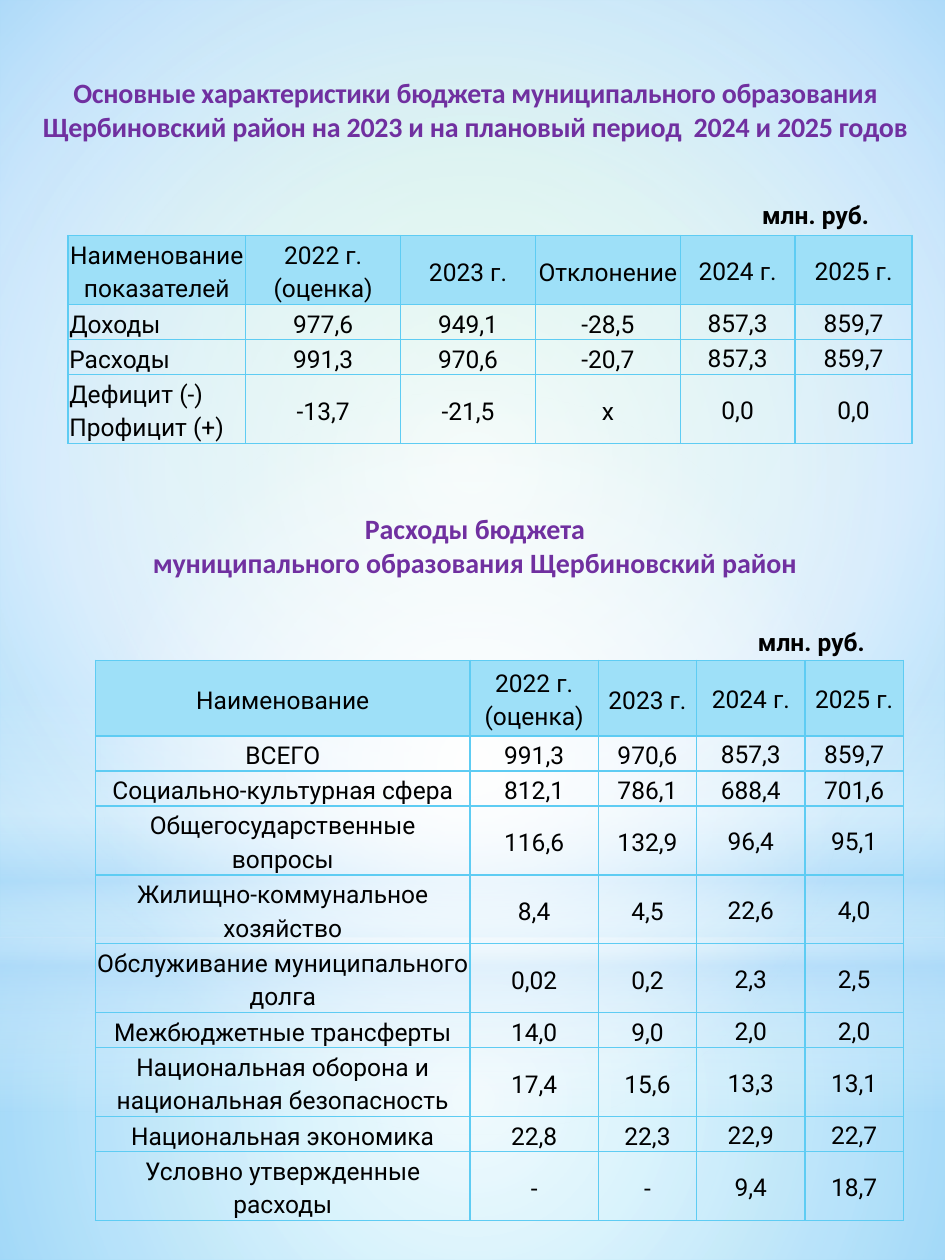
from dataclasses import dataclass

from pptx import Presentation
from pptx.dml.color import RGBColor
from pptx.enum.shapes import MSO_SHAPE
from pptx.enum.text import MSO_ANCHOR, MSO_AUTO_SIZE, PP_ALIGN
from pptx.oxml import parse_xml
from pptx.oxml.ns import nsdecls, qn
from pptx.util import Inches, Pt


@dataclass(frozen=True)
class Theme:
    """Colours, fonts and type sizes of the slide."""

    heading: str = "7030A0"
    text: str = "000000"
    border: str = "5ECCF3"
    header: str = "9EE0F8"
    white: str = "FFFFFF"
    sky: str = "B4DCFA"
    mint: str = "9EE2CF"
    heading_font: str = "Calibri"
    body_font: str = "Roboto"
    heading_size: int = 16
    body_size: int = 14


def write_text(frame, text, *, font, size, color, bold=False,
               align=PP_ALIGN.CENTER, line_spacing=1.0, tracking=0):
    """Write one formatted paragraph for each line of the text."""
    for index, line in enumerate(text.split("\n")):
        para = frame.paragraphs[0] if index == 0 else frame.add_paragraph()
        para.alignment = align
        para.line_spacing = line_spacing
        span = para.add_run()
        span.text = line
        span.font.name = font
        span.font.size = Pt(size)
        span.font.bold = bold
        span.font.color.rgb = RGBColor.from_string(color)
        if tracking:
            span.font._element.set("spc", str(round(tracking * 100)))


def make_gradient(stops, focus=None, angle=0):
    """Return a circular gradient around the focus, or a linear one at the angle."""
    marks = "".join(
        f'<a:gs pos="{place * 1000}"><a:srgbClr val="{color}">'
        f'<a:alpha val="{opacity * 1000}"/></a:srgbClr></a:gs>'
        for place, color, opacity in stops)
    shade = f'<a:lin ang="{angle * 60000}" scaled="0"/>'
    if focus:
        sides = " ".join(f'{side}="{value * 1000}"' for side, value in zip("ltrb", focus))
        shade = f'<a:path path="circle"><a:fillToRect {sides}/></a:path>'
    return parse_xml(f'<a:gradFill {nsdecls("a")} rotWithShape="1">'
                     f'<a:gsLst>{marks}</a:gsLst>{shade}</a:gradFill>')


class BudgetSlide:
    """Holds the theme and the slide, and draws each kind of element."""

    def __init__(self, deck, theme):
        """Add a slide with a title placeholder."""
        self.theme = theme
        self.page = deck.slides.add_slide(deck.slide_layouts[5])

    def background(self, stops, focus):
        """Fill the page background with a circular gradient."""
        self.page.background.fill.solid()
        solid = next(self.page.element.iter(qn("a:solidFill")))
        solid.getparent().replace(solid, make_gradient(stops, focus))

    def glow(self, kind, top, height, stops, focus=None, angle=0):
        """Draw a translucent gradient across the page width."""
        shape = self.page.shapes.add_shape(
            kind, 0, Inches(top), Inches(7.5), Inches(height))
        shape.shadow.inherit = False
        shape.line.fill.background()
        shape.fill.solid()
        solid = shape.element.spPr.find(qn("a:solidFill"))
        shape.element.spPr.replace(solid, make_gradient(stops, focus, angle))

    def heading(self, box, text, tracking=0):
        """Format a box as a purple heading without insets."""
        frame = box.text_frame
        frame.word_wrap = True
        frame.auto_size = MSO_AUTO_SIZE.NONE
        frame.vertical_anchor = MSO_ANCHOR.TOP
        frame.margin_left = frame.margin_right = 0
        frame.margin_top = frame.margin_bottom = 0
        write_text(frame, text, font=self.theme.heading_font,
                   size=self.theme.heading_size, color=self.theme.heading,
                   bold=True, tracking=tracking)

    def title(self, text, left, top, width, height):
        """Place the title placeholder above the glows."""
        box = self.page.shapes.title
        box.left, box.top = Inches(left), Inches(top)
        box.width, box.height = Inches(width), Inches(height)
        self.page.shapes._spTree.append(box.element)
        self.heading(box, text, tracking=-0.1)

    def text_box(self, left, top, width, height):
        """Add an empty wrapping text box."""
        box = self.page.shapes.add_textbox(
            Inches(left), Inches(top), Inches(width), Inches(height))
        box.text_frame.word_wrap = True
        return box

    def unit(self, left, top, width, align):
        """Label a table with its unit."""
        box = self.text_box(left, top, width, 0.34)
        write_text(box.text_frame, "млн. руб.", font=self.theme.body_font,
                   size=self.theme.body_size, color=self.theme.text,
                   bold=True, align=align)

    def border(self, cell):
        """Draw a thin line on all sides of a cell."""
        properties = cell._tc.get_or_add_tcPr()
        for index, side in enumerate("LRTB"):
            properties.insert(index, parse_xml(
                f'<a:ln{side} {nsdecls("a")} w="12700"><a:solidFill>'
                f'<a:srgbClr val="{self.theme.border}"/></a:solidFill></a:ln{side}>'))

    def table(self, left, top, height, widths, heights, rows, label_align):
        """Draw a bordered table with a tinted header row."""
        holder = self.page.shapes.add_table(
            len(rows), len(widths), Inches(left), Inches(top),
            Inches(sum(widths)), Inches(height))
        table = holder.table
        table.first_row = table.horz_banding = False
        for column, width in zip(table.columns, widths):
            column.width = Inches(width)
        for row, size in zip(table.rows, heights):
            row.height = Inches(size)
        holder.height = Inches(height)
        for row_index, row in enumerate(rows):
            for column_index, text in enumerate(row):
                cell = table.cell(row_index, column_index)
                inset = Inches(0.01 if column_index < len(widths) - 2 else 0)
                cell.margin_left = cell.margin_right = cell.margin_top = inset
                cell.margin_bottom = 0
                cell.vertical_anchor = MSO_ANCHOR.MIDDLE
                if row_index == 0:
                    cell.fill.solid()
                    cell.fill.fore_color.rgb = RGBColor.from_string(self.theme.header)
                else:
                    cell.fill.background()
                self.border(cell)
                is_label = row_index > 0 and column_index == 0
                write_text(cell.text_frame, text, font=self.theme.body_font,
                           size=self.theme.body_size, color=self.theme.text,
                           align=label_align if is_label else PP_ALIGN.CENTER,
                           line_spacing=1.15)


SUMMARY = [
    ("Наименование\nпоказателей", "2022 г. (оценка)", "2023 г.", "Отклонение", "2024 г.", "2025 г."),
    ("Доходы", "977,6", "949,1", "-28,5", "857,3", "859,7"),
    ("Расходы", "991,3", "970,6", "-20,7", "857,3", "859,7"),
    ("Дефицит (-)\nПрофицит (+)", "-13,7", "-21,5", "x", "0,0", "0,0"),
]
EXPENSES = [
    ("Наименование", "2022 г. (оценка)", "2023 г.", "2024 г.", "2025 г."),
    ("ВСЕГО", "991,3", "970,6", "857,3", "859,7"),
    ("Социально-культурная сфера", "812,1", "786,1", "688,4", "701,6"),
    ("Общегосударственные вопросы", "116,6", "132,9", "96,4", "95,1"),
    ("Жилищно-коммунальное хозяйство", "8,4", "4,5", "22,6", "4,0"),
    ("Обслуживание муниципального долга", "0,02", "0,2", "2,3", "2,5"),
    ("Межбюджетные трансферты", "14,0", "9,0", "2,0", "2,0"),
    ("Национальная оборона и национальная безопасность", "17,4", "15,6", "13,3", "13,1"),
    ("Национальная экономика", "22,8", "22,3", "22,9", "22,7"),
    ("Условно утвержденные расходы", "-", "-", "9,4", "18,7"),
]


def main():
    """Build the budget slide and save it."""
    deck = Presentation()
    deck.slide_width, deck.slide_height = Inches(7.5), Inches(10)
    theme = Theme()
    white, sky = theme.white, theme.sky
    slide = BudgetSlide(deck, theme)
    center = (50, 50, 50, 50)
    slide.background([(0, theme.mint, 100), (60, sky, 100), (100, theme.border, 100)],
                     (20, 10, 20, 60))
    slide.glow(MSO_SHAPE.RECTANGLE, 7.44, 2.56,
               [(0, white, 91), (37, white, 76), (100, sky, 79)], center)
    slide.glow(MSO_SHAPE.RECTANGLE, 0, 7.44,
               [(0, white, 89), (48, white, 62), (100, sky, 79)], center)
    slide.glow(MSO_SHAPE.RECTANGLE, 5.49, 3.33,
               [(0, white, 0), (29, white, 30), (45, sky, 40),
                (55, white, 26), (65, sky, 60), (100, white, 0)], angle=90)
    slide.glow(MSO_SHAPE.OVAL, 2.33, 7.44, [(0, white, 100), (56, white, 0)], center)
    slide.title("Основные характеристики бюджета муниципального образования Щербиновский "
                "район на 2023 и на плановый период  2024 и 2025 годов", 0.17, 0.6, 7.21, 0.77)
    slide.heading(slide.text_box(1.21, 4.06, 5.12, 0.54),
                  "Расходы бюджета\nмуниципального образования Щербиновский район")
    slide.unit(5.95, 1.54, 1.29, PP_ALIGN.LEFT)
    slide.unit(5.84, 4.93, 1.2, PP_ALIGN.CENTER)
    slide.table(0.54, 1.87, 1.63, [1.41, 1.23, 1.07, 1.15, 0.91, 0.93],
                [0.53, 0.16, 0.16, 0.31], SUMMARY, PP_ALIGN.JUSTIFY)
    slide.table(0.76, 5.24, 3.88, [2.97, 1.02, 0.78, 0.86, 0.78],
                [0.6] + [0.15] * 6 + [0.3, 0.15, 0.19], EXPENSES, PP_ALIGN.CENTER)
    deck.save("out.pptx")


if __name__ == "__main__":
    main()
